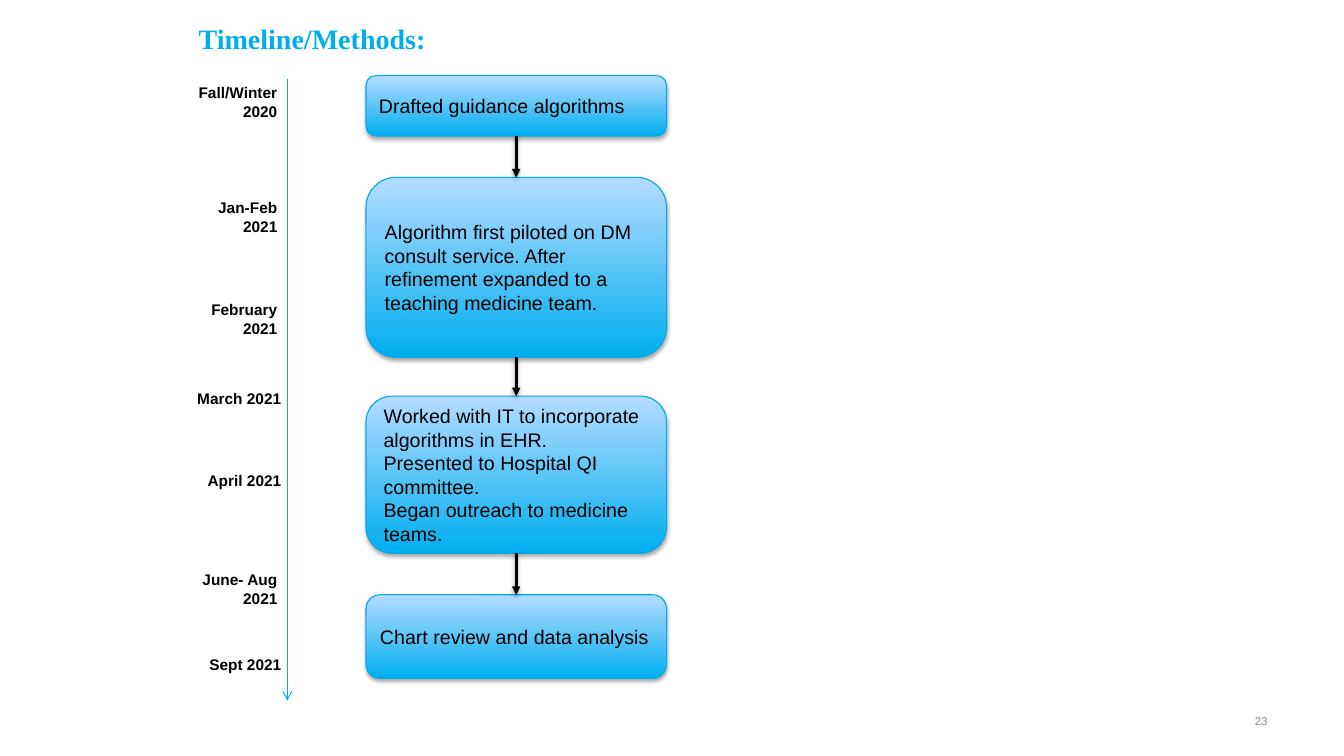
from dataclasses import dataclass

from pptx import Presentation
from pptx.dml.color import RGBColor
from pptx.enum.shapes import MSO_CONNECTOR, MSO_SHAPE
from pptx.enum.text import MSO_ANCHOR, MSO_AUTO_SIZE, PP_ALIGN
from pptx.oxml import parse_xml
from pptx.oxml.ns import nsdecls, qn
from pptx.util import Inches, Pt

ROUNDED = MSO_SHAPE.ROUNDED_RECTANGLE
STRAIGHT = MSO_CONNECTOR.STRAIGHT
TOP, MIDDLE = MSO_ANCHOR.TOP, MSO_ANCHOR.MIDDLE
LEFT, RIGHT = PP_ALIGN.LEFT, PP_ALIGN.RIGHT
FIXED, GROW = MSO_AUTO_SIZE.NONE, MSO_AUTO_SIZE.SHAPE_TO_FIT_TEXT
TITLE_ONLY_LAYOUT = 5

SLIDE_WIDTH, SLIDE_HEIGHT = Inches(13.33), Inches(7.5)
COLORS = {
    "accent": "00AEEF",
    "accent_light": "B5DCFF",
    "outline": "00AAEA",
    "text": "000000",
    "muted": "8C8C8C",
}
FORMATS = {
    "title": {"name": "Times New Roman", "size": Pt(20), "bold": True},
    "date": {"name": "Arial", "size": Pt(11), "bold": True},
    "step": {"name": "Arial", "size": Pt(14), "bold": False},
    "number": {"name": "Arial", "size": Pt(8.2), "bold": False},
}

# Positions and sizes are percentages of the slide's width or height.
AXIS_X, AXIS_TOP, AXIS_BOTTOM = 21.38, 10.4, 92.67
STEP_LEFT, STEP_WIDTH = 27.23, 22.36
ONE_LINE, TWO_LINES = 3.87, 6.27
ONE_LINE_RIGHT = 21.68


@dataclass(frozen=True)
class DateLabel:
    lines: tuple[str, ...]
    top: float
    width: float
    height: float = TWO_LINES
    right: float = AXIS_X


@dataclass(frozen=True)
class Step:
    lines: tuple[str, ...]
    top: float
    height: float

    @property
    def bottom(self) -> float:
        return self.top + self.height


DATES = (
    DateLabel(("Fall/Winter 2020",), 10.4, 8.85),
    DateLabel(("Jan-Feb", "2021"), 25.6, 10.13),
    DateLabel(("February 2021",), 39.07, 8.33),
    DateLabel(("March 2021",), 50.8, 9.15, ONE_LINE, ONE_LINE_RIGHT),
    DateLabel(("April 2021",), 61.6, 7.73, ONE_LINE, ONE_LINE_RIGHT),
    DateLabel(("June- Aug 2021",), 74.8, 7.73),
    DateLabel(("Sept 2021",), 86, 7.73, ONE_LINE, ONE_LINE_RIGHT),
)
STEPS = (
    Step(("Drafted guidance algorithms",), 10, 8),
    Step(("Algorithm first piloted on DM consult service. After refinement "
          "expanded to a teaching medicine team.",), 23.47, 23.8),
    Step(("Worked with IT to incorporate algorithms in EHR.",
          "Presented to Hospital QI committee.",
          "Began outreach to medicine teams."), 52.4, 20.8),
    Step(("Chart review and data analysis",), 78.67, 11.07),
)


def across(share: float) -> int:
    return round(SLIDE_WIDTH * share / 100)


def down(share: float) -> int:
    return round(SLIDE_HEIGHT * share / 100)


def area(left: float, top: float, width: float, height: float) -> tuple[int, ...]:
    return across(left), down(top), across(width), down(height)


def rgb(color: str) -> RGBColor:
    return RGBColor.from_string(COLORS[color])


def write_text(shape, lines: tuple[str, ...], style: str, color: str = "text",
               alignment=LEFT, anchor=TOP, auto_size=FIXED) -> None:
    frame = shape.text_frame
    frame_format = {"word_wrap": True, "auto_size": auto_size,
                    "vertical_anchor": anchor}
    for name, value in frame_format.items():
        setattr(frame, name, value)
    frame.text = "\n".join(lines)
    for paragraph in frame.paragraphs:
        paragraph.alignment = alignment
        for name, value in FORMATS[style].items():
            setattr(paragraph.font, name, value)
        paragraph.font.color.rgb = rgb(color)


def set_shadow(shape, opacity: int = 0, distance: float = 0) -> None:
    """Replace the theme's shadow; zero opacity leaves no shadow."""
    shadow = ""
    if opacity:
        shadow = (f'<a:outerShdw blurRad="{Pt(3.1)}" dist="{Pt(distance)}" '
                  f'dir="5400000" rotWithShape="0"><a:srgbClr val="{COLORS["text"]}">'
                  f'<a:alpha val="{opacity * 1000}"/></a:srgbClr></a:outerShdw>')
    effects = f'<a:effectLst {nsdecls("a")}>{shadow}</a:effectLst>'
    shape._element.spPr.append(parse_xml(effects))


def add_arrow(slide, x: float, top: float, bottom: float, color: str,
              weight: float, head: str):
    arrow = slide.shapes.add_connector(
        STRAIGHT, across(x), down(top), across(x), down(bottom))
    arrow.line.color.rgb = rgb(color)
    arrow.line.width = Pt(weight)
    outline = arrow._element.spPr.find(qn("a:ln"))
    outline.append(parse_xml(f'<a:tailEnd {nsdecls("a")} type="{head}"/>'))
    return arrow


def add_date(slide, date: DateLabel) -> None:
    box = slide.shapes.add_textbox(
        *area(date.right - date.width, date.top, date.width, date.height))
    write_text(box, date.lines, "date", alignment=RIGHT, auto_size=GROW)


def add_step(slide, step: Step) -> None:
    box = slide.shapes.add_shape(
        ROUNDED, *area(STEP_LEFT, step.top, STEP_WIDTH, step.height))
    box.fill.gradient()
    box.fill.gradient_angle = 90
    for stop, color in zip(box.fill.gradient_stops, ("accent", "accent_light")):
        stop.color.rgb = rgb(color)
    box.line.color.rgb = rgb("outline")
    box.line.width = Pt(0.75)
    set_shadow(box, opacity=35, distance=1.8)
    write_text(box, step.lines, "step", anchor=MIDDLE)


def main() -> None:
    presentation = Presentation()
    presentation.slide_width = SLIDE_WIDTH
    presentation.slide_height = SLIDE_HEIGHT
    slide = presentation.slides.add_slide(
        presentation.slide_layouts[TITLE_ONLY_LAYOUT])

    title = slide.shapes.title
    title.left, title.top, title.width, title.height = area(14.03, 2.13, 67.52, 9.07)
    write_text(title, ("Timeline/Methods:",), "title", "accent")

    number = slide.shapes.add_textbox(*area(71.72, 92.67, 23.33, 5.33))
    write_text(number, ("23",), "number", "muted", RIGHT, MIDDLE)

    axis = add_arrow(slide, AXIS_X, AXIS_TOP, AXIS_BOTTOM, "accent", 0.75, "arrow")
    set_shadow(axis)
    for date in DATES:
        add_date(slide, date)

    for step in STEPS:
        add_step(slide, step)
    for step, following in zip(STEPS, STEPS[1:]):
        link = add_arrow(slide, STEP_LEFT + STEP_WIDTH / 2, step.bottom,
                         following.top, "text", 2, "triangle")
        set_shadow(link, opacity=38, distance=1.6)

    presentation.save("out.pptx")


if __name__ == "__main__":
    main()
